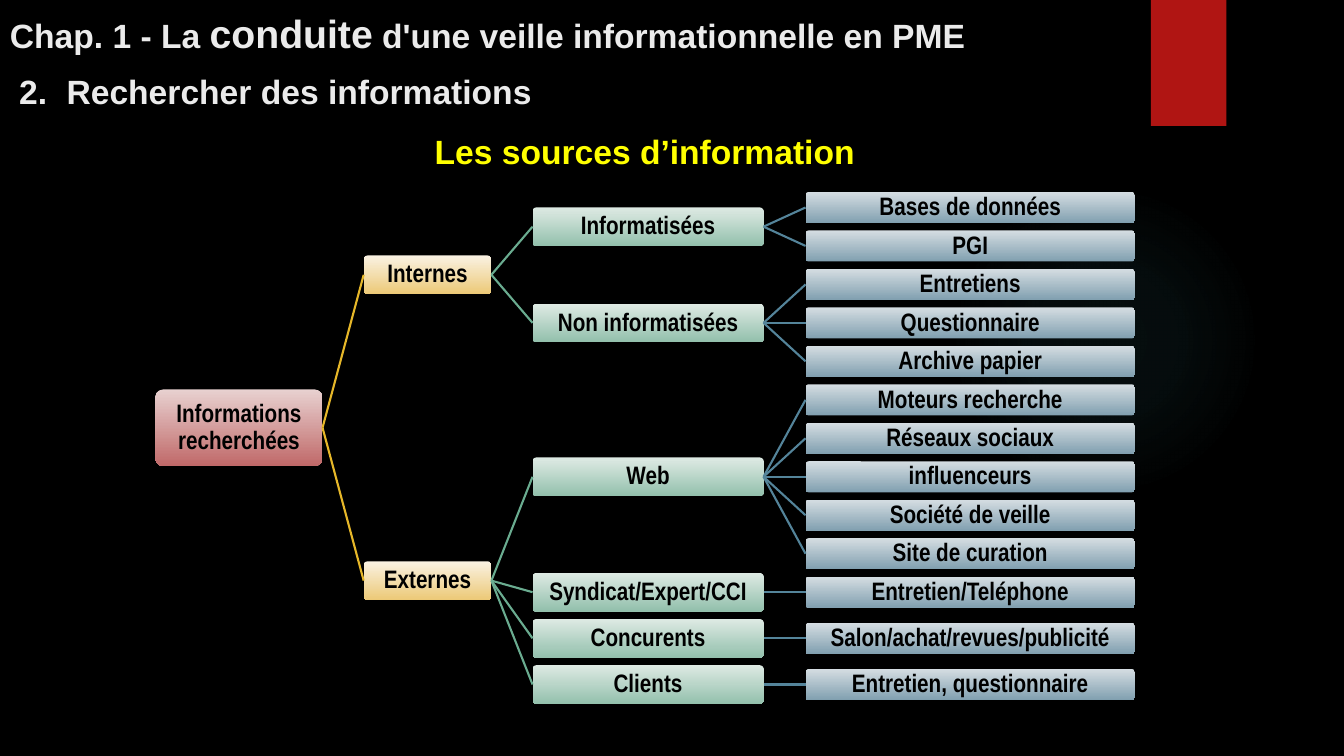
from lxml import etree
from pptx import Presentation
from pptx.dml.color import RGBColor
from pptx.enum.shapes import MSO_CONNECTOR, MSO_SHAPE
from pptx.enum.text import MSO_ANCHOR, MSO_AUTO_SIZE, PP_ALIGN
from pptx.oxml.ns import qn
from pptx.util import Inches, Pt

LEFT, CENTER = PP_ALIGN.LEFT, PP_ALIGN.CENTER
TOP, MIDDLE, BOTTOM = MSO_ANCHOR.TOP, MSO_ANCHOR.MIDDLE, MSO_ANCHOR.BOTTOM
FIXED = MSO_AUTO_SIZE.NONE
ROUND, RECT, OVAL = MSO_SHAPE.ROUNDED_RECTANGLE, MSO_SHAPE.RECTANGLE, MSO_SHAPE.OVAL
STRAIGHT = MSO_CONNECTOR.STRAIGHT

BLACK = RGBColor(0x00, 0x00, 0x00)
PALE = RGBColor(0xEB, 0xEB, 0xEB)
YELLOW = RGBColor(0xFF, 0xFF, 0x00)
RED = RGBColor(0xB0, 0x15, 0x13)
TEAL = RGBColor(0x50, 0xB9, 0xC1)
ROSE = (RGBColor(0xE8, 0xD1, 0xD0), RGBColor(0xC0, 0x69, 0x69))
GOLD = (RGBColor(0xFA, 0xF2, 0xE3), RGBColor(0xEC, 0xC9, 0x77))
MINT = (RGBColor(0xDE, 0xEA, 0xE4), RGBColor(0x93, 0xC0, 0xAC))
STEEL = (RGBColor(0xD5, 0xDD, 0xE2), RGBColor(0x81, 0xA0, 0xB0))
AMBER = RGBColor(0xE6, 0xB7, 0x29)
GREEN = RGBColor(0x6A, 0xAC, 0x90)
BLUE = RGBColor(0x54, 0x84, 0x9A)

COLS, ROWS = 160, 90
FIRST, PITCH = 24.7, 4.58
LEVELS = [
    (18.5, 19.9, 9.1, ROSE, None),
    (43.3, 15.2, 4.6, GOLD, AMBER),
    (63.4, 27.5, 4.6, MINT, GREEN),
    (95.9, 39.2, 3.7, STEEL, BLUE),
]
TREE = ("Informations recherchées", [
    ("Internes", [
        ("Informatisées", [("Bases de données", 0), ("PGI", 1)]),
        ("Non informatisées", [
            ("Entretiens", 2), ("Questionnaire", 3), ("Archive papier", 4)]),
    ]),
    ("Externes", [
        ("Web", [
            ("Moteurs recherche", 5), ("Réseaux sociaux", 6),
            ("influenceurs", 7), ("Société de veille", 8),
            ("Site de curation", 9)]),
        ("Syndicat/Expert/CCI", [("Entretien/Teléphone", 10)]),
        ("Concurents", [("Salon/achat/revues/publicité", 11.2)]),
        ("Clients", [("Entretien, questionnaire", 12.4)]),
    ]),
])


class Board:
    head, body = "Arial", "Arial Narrow"

    def __init__(self, deck):
        self.wide, self.high = deck.slide_width, deck.slide_height
        self.slide = deck.slides.add_slide(deck.slide_layouts[5])
        self.shapes = self.slide.shapes
        back = self.slide.background.fill
        back.solid()
        back.fore_color.rgb = BLACK

    def place(self, x, y, w, h):
        across, down = self.wide / COLS, self.high / ROWS
        return [round(n) for n in (x * across, y * down, w * across, h * down)]

    def style(self, run, face, size, color):
        run.font.name = face
        run.font.size = Pt(size)
        run.font.bold = True
        run.font.color.rgb = color

    def letter(self, shape, parts, color, align, anchor):
        frame = shape.text_frame
        frame.word_wrap = True
        frame.auto_size = FIXED
        frame.vertical_anchor = anchor
        line = frame.paragraphs[0]
        line.alignment = align
        for text, size in parts:
            run = line.add_run()
            run.text = text
            self.style(run, self.head, size, color)
        return frame

    def title(self, text, grid, inset, stop):
        shape = self.shapes.title
        shape.left, shape.top, shape.width, shape.height = self.place(*grid)
        props = shape.text_frame.paragraphs[0]._p.get_or_add_pPr()
        tabs = etree.SubElement(props, qn("a:tabLst"))
        etree.SubElement(tabs, qn("a:tab"), pos=str(Inches(stop)), algn="l")
        frame = self.letter(shape, [(text, 24)], PALE, LEFT, BOTTOM)
        frame.margin_left = Inches(inset)

    def label(self, parts, grid, color, align, anchor):
        shape = self.shapes.add_textbox(*self.place(*grid))
        self.letter(shape, parts, color, align, anchor)

    def block(self, kind, grid, color):
        shape = self.shapes.add_shape(kind, *self.place(*grid))
        shape.shadow.inherit = False
        shape.line.fill.background()
        shape.fill.solid()
        shape.fill.fore_color.rgb = color
        return shape

    def glow(self, grid, color, stops):
        shape = self.block(OVAL, grid, color)
        props = shape._element.spPr
        grad = etree.Element(qn("a:gradFill"))
        props.replace(props.find(qn("a:solidFill")), grad)
        scale = etree.SubElement(grad, qn("a:gsLst"))
        for spot, alpha in stops:
            stop = etree.SubElement(scale, qn("a:gs"), pos=str(spot * 1000))
            tint = etree.SubElement(stop, qn("a:srgbClr"), val=str(color))
            etree.SubElement(tint, qn("a:alpha"), val=str(alpha * 1000))
        shade = etree.SubElement(grad, qn("a:path"), path="circle")
        etree.SubElement(shade, qn("a:fillToRect"),
                         dict.fromkeys("ltrb", "50000"))

    def box(self, text, grid, shades):
        shape = self.block(ROUND, grid, shades[0])
        shape.adjustments[0] = 0.1
        shape.fill.gradient()
        shape.fill.gradient_angle = 270
        for stop, shade in zip(shape.fill.gradient_stops, shades):
            stop.color.rgb = shade
        frame = shape.text_frame
        frame.text = text
        frame.word_wrap = True
        frame.vertical_anchor = MIDDLE
        frame.margin_left = frame.margin_right = Inches(0.02)
        frame.margin_top = frame.margin_bottom = Inches(0.02)
        line = frame.paragraphs[0]
        line.alignment = CENTER
        line.line_spacing = 0.9
        self.style(line.runs[0], self.body, 18, BLACK)
        return shape

    def link(self, start, end, color):
        wire = self.shapes.add_connector(STRAIGHT, 0, 0, 0, 0)
        wire.begin_connect(start, 3)
        wire.end_connect(end, 1)
        wire.line.color.rgb = color
        wire.line.width = Pt(1.5)
        etree.SubElement(wire._element.spPr, qn("a:effectLst"))

    def tree(self, node, depth=0):
        text, below = node
        x, w, h, shades, _ = LEVELS[depth]
        kids, row = [], below
        if isinstance(below, list):
            kids = [self.tree(kid, depth + 1) for kid in below]
            row = (kids[0][1] + kids[-1][1]) / 2
        y = FIRST + row * PITCH - h / 2
        shape = self.box(text, (x, y, w, h), shades)
        for kid, _ in kids:
            self.link(shape, kid, LEVELS[depth + 1][4])
        return shape, row


def main():
    deck = Presentation()
    deck.slide_width, deck.slide_height = Inches(13.33), Inches(7.5)
    board = Board(deck)
    board.glow((113, 22, 37, 37), TEAL, [(0, 7), (36, 6), (69, 0)])
    board.block(RECT, (137, 0, 9, 15), RED)
    board.title("2.\tRechercher des informations", (0, 7.9, 118.6, 6), 0.19, 0.47)
    board.label([("Chap. 1 - La ", 24), ("conduite", 28),
                 (" d'une veille informationnelle en PME", 24)],
                (0, 0, 160, 7.3), PALE, LEFT, BOTTOM)
    board.label([("Les sources d’information", 24)],
                (1, 15, 151.5, 6), YELLOW, CENTER, TOP)
    board.tree(TREE)
    deck.save("out.pptx")


if __name__ == "__main__":
    main()
